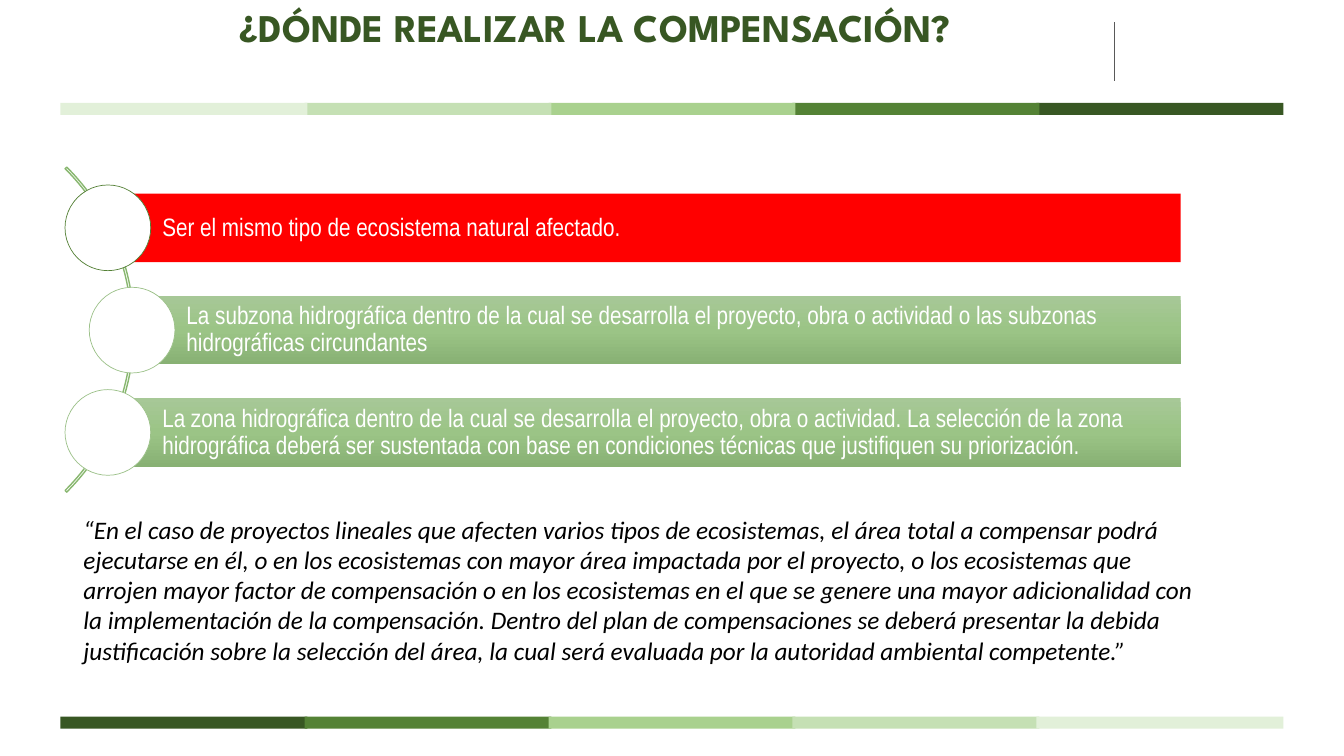
from copy import deepcopy

from pptx import Presentation
from pptx.dml.color import RGBColor
from pptx.enum.shapes import MSO_CONNECTOR, MSO_SHAPE
from pptx.enum.text import MSO_ANCHOR, PP_ALIGN
from pptx.oxml.ns import qn
from pptx.util import Inches, Pt
from lxml import etree

WHITE = RGBColor(0xFF, 0xFF, 0xFF)
BLACK = RGBColor(0, 0, 0)
RED = RGBColor(0xFF, 0, 0)
GREY = RGBColor(0x59, 0x59, 0x59)
DARK_GREEN = RGBColor(0x38, 0x57, 0x23)
ARC_GREEN = RGBColor(0x88, 0xB7, 0x6F)
RING_DARK = RGBColor(0x53, 0x80, 0x35)
RING_LIGHT = RGBColor(0x9C, 0xC1, 0x89)
STRIP_GREENS = [DARK_GREEN, RGBColor(0x54, 0x82, 0x35), RGBColor(0xA9, 0xD1, 0x8E),
                RGBColor(0xC5, 0xE0, 0xB4), RGBColor(0xE2, 0xF0, 0xD9)]
BAR_GRADIENT = [RGBColor(0xA7, 0xC8, 0x97), RGBColor(0x9B, 0xC4, 0x86),
                RGBColor(0x88, 0xB1, 0x74)]

BAR_RIGHT, BAR_HEIGHT, CIRCLE_SIZE = 11.71, 0.68, 0.85
FIRST_CENTER, ROW_PITCH = 2.26, 1.015

# Criterion, left edge of its bar, fill (None for the gradient), ring colour
CRITERIA = [
    ("Ser el mismo tipo de ecosistema natural afectado.", 1.07, RED, RING_DARK),
    ("La subzona hidrográfica dentro de la cual se desarrolla el proyecto, obra o "
     "actividad o las subzonas hidrográficas circundantes", 1.31, None, RING_LIGHT),
    ("La zona hidrográfica dentro de la cual se desarrolla el proyecto, obra o actividad. "
     "La selección de la zona hidrográfica deberá ser sustentada con base en condiciones "
     "técnicas que justifiquen su priorización.", 1.07, None, RING_LIGHT),
]
QUOTE = [
    "“En el caso de proyectos lineales que afecten varios tipos de ecosistemas, el área total a compensar podrá",
    "ejecutarse en él, o en los ecosistemas con mayor área impactada por el proyecto, o los ecosistemas que",
    "arrojen mayor factor de compensación o en los ecosistemas en el que se genere una mayor adicionalidad con",
    "la implementación de la compensación. Dentro del plan de compensaciones se deberá presentar la debida",
    "justificación sobre la selección del área, la cual será evaluada por la autoridad ambiental competente.”",
]


def add_plain_shape(slide, kind, left, top, width, height, fill=None, line=None, weight=0.5):
    shape = slide.shapes.add_shape(kind, Inches(left), Inches(top), Inches(width), Inches(height))
    shape.shadow.inherit = False
    if fill is None:
        shape.fill.background()
    else:
        shape.fill.solid()
        shape.fill.fore_color.rgb = fill
    if line is None:
        shape.line.fill.background()
    else:
        shape.line.color.rgb = line
        shape.line.width = Pt(weight)
    return shape


def write_lines(frame, lines, font, size, color, spacing=None, bold=False, italic=False):
    frame.word_wrap = True
    for index, line in enumerate(lines):
        paragraph = frame.add_paragraph() if index else frame.paragraphs[0]
        paragraph.alignment = PP_ALIGN.LEFT
        if spacing:
            paragraph.line_spacing = spacing
        run = paragraph.add_run()
        run.text = line
        run.font.name = font
        run.font.size = Pt(size)
        run.font.bold = bold
        run.font.italic = italic
        run.font.color.rgb = color


def add_text(slide, left, top, width, height):
    box = slide.shapes.add_textbox(Inches(left), Inches(top), Inches(width), Inches(height))
    return box.text_frame


def add_strip(slide, top, dark_first):
    """Five overlapping segments, always drawn from dark to light."""
    for index, green in enumerate(STRIP_GREENS):
        column = index if dark_first else len(STRIP_GREENS) - 1 - index
        add_plain_shape(slide, MSO_SHAPE.RECTANGLE, 0.6 + 2.42 * column, top, 2.45, 0.12, green)


def add_divider(slide, x, top, bottom):
    divider = slide.shapes.add_connector(
        MSO_CONNECTOR.STRAIGHT, Inches(x), Inches(top), Inches(x), Inches(bottom))
    divider.line.color.rgb = GREY
    divider.line.width = Pt(0.5)
    etree.SubElement(divider._element.spPr, qn("a:effectLst"))


def apply_gradient(bar):
    bar.fill.gradient()
    stop_list = next(bar._element.spPr.iter(qn("a:gsLst")))
    stop_list.append(deepcopy(stop_list[0]))
    for index, (stop, color) in enumerate(zip(bar.fill.gradient_stops, BAR_GRADIENT)):
        stop.color.rgb = color
        stop.position = index / 2
    bar.fill.gradient_angle = 270


def add_criterion(slide, center, text, left, fill, ring):
    bar = add_plain_shape(slide, MSO_SHAPE.RECTANGLE, left, center - BAR_HEIGHT / 2,
                          BAR_RIGHT - left, BAR_HEIGHT, fill)
    if fill is None:
        apply_gradient(bar)
    frame = bar.text_frame
    frame.vertical_anchor = MSO_ANCHOR.MIDDLE
    frame.margin_left = Inches(0.54)
    frame.margin_right = frame.margin_top = frame.margin_bottom = Inches(0.05)
    write_lines(frame, [text], "Arial Narrow", 18, WHITE, spacing=0.9)
    # Circle centred on the left edge of the bar
    add_plain_shape(slide, MSO_SHAPE.OVAL, left - CIRCLE_SIZE / 2, center - CIRCLE_SIZE / 2,
                    CIRCLE_SIZE, CIRCLE_SIZE, WHITE, ring)


def main():
    prs = Presentation()
    prs.slide_width, prs.slide_height = Inches(13.33), Inches(7.5)
    slide = prs.slides.add_slide(prs.slide_layouts[6])

    # Frame of the slide
    add_strip(slide, 1.02, dark_first=False)
    add_strip(slide, 7.11, dark_first=True)
    add_divider(slide, 11.05, 0.22, 0.8)

    # Criteria along the arc
    arc = add_plain_shape(slide, MSO_SHAPE.BLOCK_ARC, -3.23, 0.99, 4.56, 4.56,
                          line=ARC_GREEN, weight=1)
    for index, value in enumerate((189, 27, 0.005)):
        arc.adjustments[index] = value
    for row, criterion in enumerate(CRITERIA):
        add_criterion(slide, FIRST_CENTER + ROW_PITCH * row, *criterion)

    # Title
    title = add_text(slide, 2.28, 0, 7.99, 0.91)
    title.vertical_anchor = MSO_ANCHOR.BOTTOM
    title.margin_bottom = Inches(0.4)
    write_lines(title, ["¿DÓNDE REALIZAR LA COMPENSACIÓN?"], "League Spartan", 28,
                DARK_GREEN, spacing=0.9, bold=True)

    # Quotation
    quote = add_text(slide, 0.73, 5.05, 11.97, 1.62)
    write_lines(quote, QUOTE, "Calibri", 18, BLACK, italic=True)

    prs.save("out.pptx")


if __name__ == "__main__":
    main()
